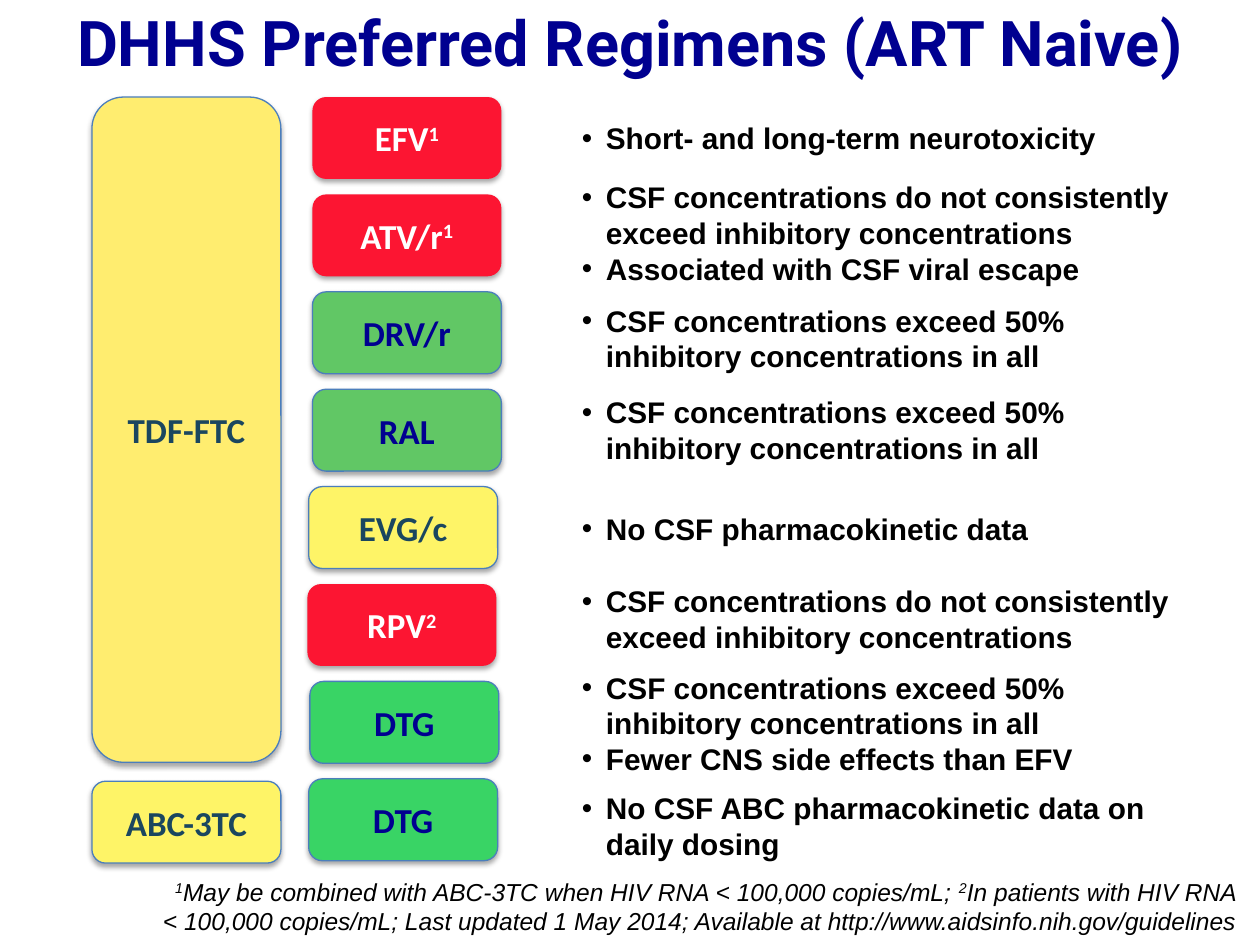
from dataclasses import dataclass
from lxml.etree import SubElement
from pptx import Presentation
from pptx.dml.color import RGBColor
from pptx.enum.shapes import MSO_SHAPE
from pptx.enum.text import MSO_ANCHOR, MSO_AUTO_SIZE, PP_ALIGN
from pptx.oxml.ns import qn
from pptx.util import Inches, Pt

WIDTH, HEIGHT = Inches(10), Inches(7.5)
COLUMN, ROW = WIDTH / 100, HEIGHT / 75


@dataclass(frozen=True)
class Theme:
    navy: str = "000090"
    slate: str = "1A465F"
    white: str = "FFFFFF"
    black: str = "000000"
    outline: str = "4B7EBC"
    gold: str = "FFED6F"
    yellow: str = "FEF467"
    red: str = "FC1532"
    green: str = "61C765"
    bright_green: str = "39D465"
    title_size: int = 36
    label_size: int = 20
    note_size: int = 17
    footnote_size: int = 14


@dataclass(frozen=True)
class Box:
    left: float
    top: float
    width: float
    height: float

    def place(self):
        return (round(self.left * COLUMN), round(self.top * ROW),
                round(self.width * COLUMN), round(self.height * ROW))


THEME = Theme()
CARD_WIDTH, CARD_HEIGHT, PITCH = 15, 6.5, 7.73
NOTE_OFFSET, NOTE_LINE, NOTE_PADDING = 20.4, 2.85, 1
FAILS = (THEME.red, THEME.white, None)
REACHES = (THEME.green, THEME.navy, THEME.outline)
REACHES_WELL = (THEME.bright_green, THEME.navy, THEME.outline)
UNKNOWN = (THEME.yellow, THEME.slate, THEME.outline)
BACKBONE = (THEME.gold, THEME.slate, THEME.outline)

BELOW = "CSF concentrations do not consistently exceed inhibitory concentrations"
ABOVE = "CSF concentrations exceed 50% inhibitory concentrations in all"
REGIMENS = [
    ("EFV", "1", FAILS, 0.4, ["Short- and long-term neurotoxicity"], 1, 47.1, 0),
    ("ATV/r", "1", FAILS, 0.4, [BELOW, "Associated with CSF viral escape"], 3, 50.6, -0.18),
    ("DRV/r", "", REACHES, 0.4, [ABOVE], 2, 49.2, 0.44),
    ("RAL", "", REACHES, 0.4, [ABOVE], 2, 48.6, 0),
    ("EVG/c", "", UNKNOWN, 0.1, ["No CSF pharmacokinetic data"], 1, 45.8, 0.08),
    ("RPV", "2", FAILS, 0, [BELOW], 2, 50.6, -0.45),
    ("DTG", "", REACHES_WELL, 0.2, [ABOVE, "Fewer CNS side effects than EFV"], 3, 45.8, 0.07),
    ("DTG", "", REACHES_WELL, 0.1, ["No CSF ABC pharmacokinetic data on daily dosing"], 2, 51.7, 0.49),
]
FOOTNOTE = [
    [("1", True), ("May be combined with ABC-3TC when HIV RNA < 100,000 copies/mL; ", False),
     ("2", True), ("In patients with HIV RNA", False)],
    [("< 100,000 copies/mL; Last updated 1 May 2014; "
      "Available at http://www.aidsinfo.nih.gov/guidelines", False)],
]


def set_values(target, values):
    for name, value in values.items():
        setattr(target, name, value)


def add_run(paragraph, text, color, superscript=False, **font_values):
    run = paragraph.add_run()
    run.text = text
    set_values(run.font, font_values)
    run.font.color.rgb = RGBColor.from_string(color)
    if superscript:
        run.font._element.set("baseline", "30000")


def add_shadow(shape):
    shape.shadow.inherit = False
    effects = shape._element.spPr.find(qn("a:effectLst"))
    shadow = SubElement(effects, qn("a:outerShdw"), blurRad=str(Pt(3.1)),
                        dist=str(Pt(1.8)), dir="5400000", rotWithShape="0")
    color = SubElement(shadow, qn("a:srgbClr"), val=THEME.black)
    SubElement(color, qn("a:alpha"), val="35000")


def add_title(slide, box, text):
    title = slide.shapes.title
    set_values(title, dict(zip(("left", "top", "width", "height"), box.place())))
    set_values(title.text_frame, {
        "word_wrap": True, "auto_size": MSO_AUTO_SIZE.NONE,
        "vertical_anchor": MSO_ANCHOR.TOP, "margin_left": 0, "margin_right": 0})
    paragraph = title.text_frame.paragraphs[0]
    paragraph.alignment = PP_ALIGN.CENTER
    add_run(paragraph, text, THEME.navy, name="Roboto", size=Pt(THEME.title_size), bold=True)


def add_card(slide, box, label, mark, style):
    fill, text_color, outline = style
    card = slide.shapes.add_shape(MSO_SHAPE.ROUNDED_RECTANGLE, *box.place())
    card.fill.solid()
    card.fill.fore_color.rgb = RGBColor.from_string(fill)
    if outline:
        card.line.color.rgb = RGBColor.from_string(outline)
        card.line.width = Pt(0.75)
    else:
        card.line.fill.background()
    add_shadow(card)
    card.text_frame.vertical_anchor = MSO_ANCHOR.MIDDLE
    paragraph = card.text_frame.paragraphs[0]
    paragraph.alignment = PP_ALIGN.CENTER
    for text, superscript in ((label, False), (mark, True)):
        if text:
            add_run(paragraph, text, text_color, superscript, name="Calibri",
                    size=Pt(THEME.label_size), bold=True)


def add_notes(slide, box, notes):
    frame = slide.shapes.add_textbox(*box.place()).text_frame
    set_values(frame, {"word_wrap": True, "auto_size": MSO_AUTO_SIZE.SHAPE_TO_FIT_TEXT})
    for index, note in enumerate(notes):
        paragraph = frame.add_paragraph() if index else frame.paragraphs[0]
        properties = paragraph._p.get_or_add_pPr()
        indent = round(1.9 * COLUMN)
        properties.set("marL", str(indent))
        properties.set("indent", str(-indent))
        SubElement(properties, qn("a:buFont"), typeface="Arial")
        SubElement(properties, qn("a:buChar"), char="•")
        add_run(paragraph, note, THEME.black, name="Arial", size=Pt(THEME.note_size), bold=True)


def add_backbones(slide, box):
    last_top = box.top + box.height - CARD_HEIGHT
    add_card(slide, Box(box.left, box.top, box.width, 52.8), "TDF-FTC", "", BACKBONE)
    add_card(slide, Box(box.left, last_top, box.width, CARD_HEIGHT), "ABC-3TC", "", UNKNOWN)


def add_regimens(slide, box):
    for index, (label, mark, style, shift, notes, lines, width, nudge) in enumerate(REGIMENS):
        top = box.top + index * PITCH
        add_card(slide, Box(box.left + shift, top, CARD_WIDTH, CARD_HEIGHT), label, mark, style)
        height = NOTE_PADDING + lines * NOTE_LINE
        note_top = top + (CARD_HEIGHT - height) / 2 + nudge
        add_notes(slide, Box(box.left + NOTE_OFFSET + 0.4, note_top, width, height), notes)


def add_footnote(slide, box):
    frame = slide.shapes.add_textbox(*box.place()).text_frame
    set_values(frame, {"word_wrap": False, "auto_size": MSO_AUTO_SIZE.SHAPE_TO_FIT_TEXT,
                       "margin_right": round(1.4 * COLUMN)})
    for index, parts in enumerate(FOOTNOTE):
        paragraph = frame.add_paragraph() if index else frame.paragraphs[0]
        paragraph.alignment = PP_ALIGN.RIGHT
        for text, superscript in parts:
            add_run(paragraph, text, THEME.black, superscript, name="Arial",
                    size=Pt(THEME.footnote_size), italic=True)


def main():
    presentation = Presentation()
    set_values(presentation, {"slide_width": WIDTH, "slide_height": HEIGHT})
    slide = presentation.slides.add_slide(presentation.slide_layouts[5])
    add_title(slide, Box(5, -0.2, 90, 12.5), "DHHS Preferred Regimens (ART Naive)")
    add_backbones(slide, Box(7.3, 7.7, CARD_WIDTH, 60.8))
    add_regimens(slide, Box(24.4, 7.7, 72.5, 60.6))
    add_footnote(slide, Box(11.3, 69.1, 88.3, 5.7))
    presentation.save("out.pptx")


if __name__ == "__main__":
    main()
